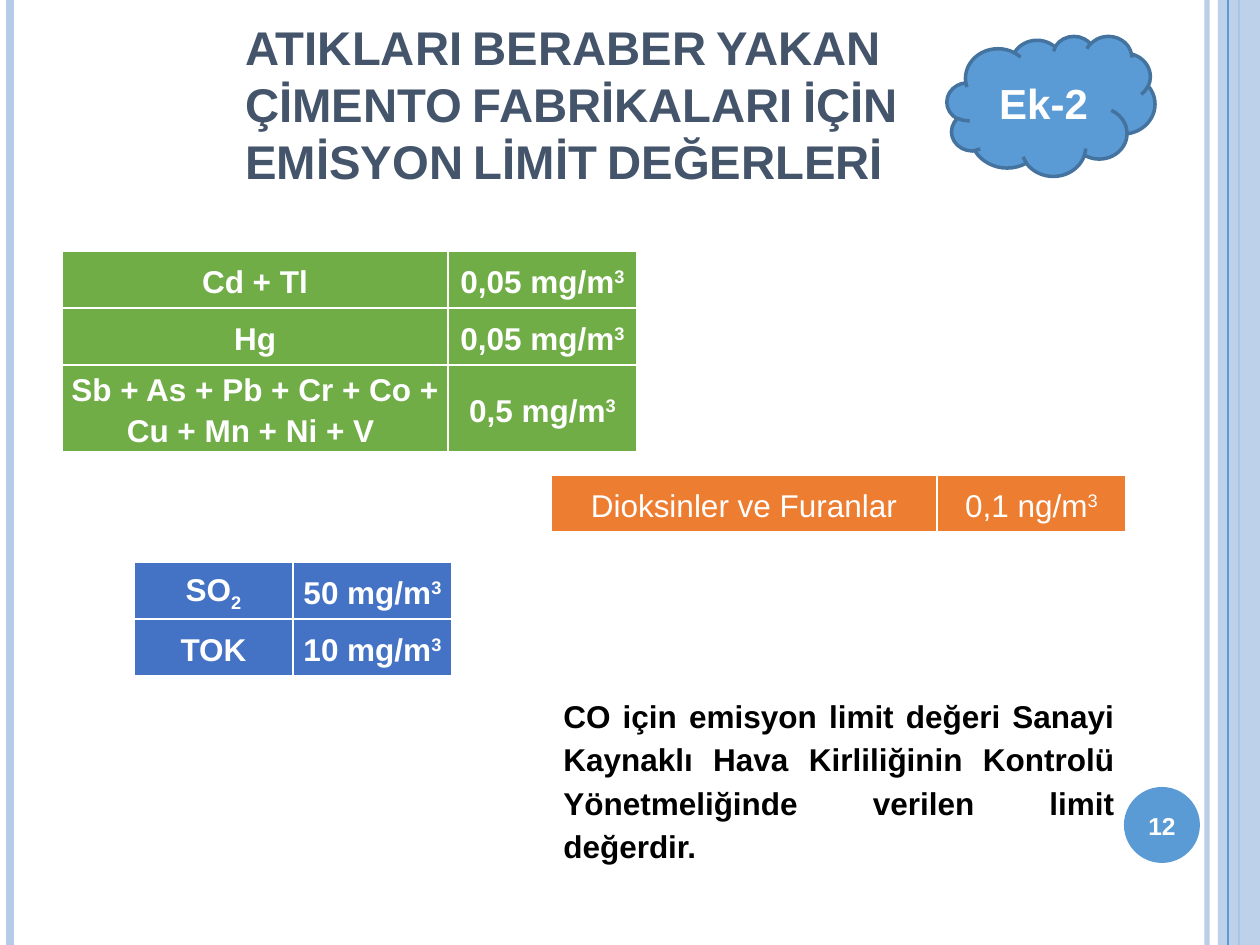
from dataclasses import dataclass

from lxml.etree import SubElement
from pptx import Presentation
from pptx.dml.color import RGBColor
from pptx.enum.shapes import MSO_CONNECTOR, MSO_SHAPE
from pptx.enum.text import MSO_ANCHOR, PP_ALIGN
from pptx.oxml.ns import qn
from pptx.util import Emu, Pt


@dataclass(frozen=True)
class Theme:
    font: str = "Arial"
    white: str = "FFFFFF"
    black: str = "000000"
    title: str = "44546A"
    blue: str = "5B9BD5"
    outline: str = "43739E"
    pale: str = "B5CBE7"
    green: str = "70AD47"
    indigo: str = "4472C4"
    orange: str = "ED7D31"
    title_size: int = 27
    badge_size: int = 24
    body_size: int = 18
    number_size: int = 14


T = Theme()
SCALE = 914400 / 126  # EMU per px
WIDTH, HEIGHT = 1260, 945
SUPER, SUB = 30, -25


def px(n):
    return Emu(round(n * SCALE))


def rgb(color):
    return RGBColor.from_string(color)


def set_alpha(fill_parent, percent):
    color = fill_parent.find(f".//{qn('a:srgbClr')}")
    SubElement(color, qn("a:alpha"), val=str(percent * 1000))


def add_run(p, text, size, color, bold=True, baseline=0):
    r = p.add_run()
    r.text = text
    r.font.name, r.font.size, r.font.bold = T.font, Pt(size), bold
    r.font.color.rgb = rgb(color)
    if baseline:
        r.font._element.set("baseline", str(baseline * 1000))
    return r


def add_rule(slide, x, color, width, alpha=None):
    """Full-height vertical line."""
    line = slide.shapes.add_connector(
        MSO_CONNECTOR.STRAIGHT, px(x), 0, px(x), px(HEIGHT))
    line.line.color.rgb = rgb(color)
    line.line.width = Pt(width)
    sp_pr = line._element.spPr
    if alpha:
        set_alpha(sp_pr, alpha)
    SubElement(sp_pr, qn("a:effectLst"))


def add_shape(slide, kind, x, y, w, h, fill, outline=None, alpha=None):
    sp = slide.shapes.add_shape(kind, px(x), px(y), px(w), px(h))
    sp.shadow.inherit = False
    sp.fill.solid()
    sp.fill.fore_color.rgb = rgb(fill)
    if alpha:
        set_alpha(sp._element.spPr, alpha)
    if outline:
        sp.line.color.rgb = rgb(outline)
        sp.line.width = Pt(2)
    else:
        sp.line.fill.background()
    return sp


def first_paragraph(sp, anchor, align):
    tf = sp.text_frame
    tf.word_wrap = True
    tf.vertical_anchor = anchor
    p = tf.paragraphs[0]
    p.alignment = align
    return p


def add_text_box(slide, x, y, w, h, anchor, align):
    sp = slide.shapes.add_textbox(px(x), px(y), px(w), px(h))
    return first_paragraph(sp, anchor, align)


def style_cell(cell, fill):
    tc_pr = cell._tc.get_or_add_tcPr()
    for side in ("a:lnL", "a:lnR", "a:lnT", "a:lnB"):
        ln = SubElement(tc_pr, qn(side), w=str(Pt(1)))
        SubElement(SubElement(ln, qn("a:solidFill")), qn("a:srgbClr"), val=T.white)
    cell.fill.solid()
    cell.fill.fore_color.rgb = rgb(fill)
    cell.vertical_anchor = MSO_ANCHOR.MIDDLE
    cell.margin_left = cell.margin_right = px(9)
    cell.margin_top = cell.margin_bottom = 0


def add_limit_table(slide, x, y, col_widths, row_heights, rows, fill, bold=True):
    """Table of substances and limits; a cell is a list of (text, baseline)."""
    frame = slide.shapes.add_table(len(rows), len(col_widths), px(x), px(y),
                                   px(sum(col_widths)), px(sum(row_heights)))
    table = frame.table
    table.first_row = table.horz_banding = False
    for column, w in zip(table.columns, col_widths):
        column.width = px(w)
    for i, (h, row) in enumerate(zip(row_heights, rows)):
        table.rows[i].height = px(h)
        for j, parts in enumerate(row):
            cell = table.cell(i, j)
            style_cell(cell, fill)
            p = cell.text_frame.paragraphs[0]
            p.alignment = PP_ALIGN.CENTER
            p.line_spacing = 1.15
            if j == 1:
                p.space_after = Pt(10)
            for text, baseline in parts:
                add_run(p, text, T.body_size, T.white, bold, baseline)


def plain(text):
    return [(text, 0)]


def limit(value, unit="mg/m"):
    return [(f"{value} {unit}", 0), ("3", SUPER)]


def add_frame(slide):
    add_rule(slide, 1207, T.pale, 3, alpha=93)
    add_rule(slide, 10, T.pale, 4.5)
    add_rule(slide, 1239, T.blue, 1.5)
    add_shape(slide, MSO_SHAPE.RECTANGLE, 1218, 0, WIDTH - 1218, HEIGHT,
              T.pale, alpha=87)
    add_rule(slide, 1228, T.blue, 0.75)
    add_shape(slide, MSO_SHAPE.OVAL, 1124, 787, 76, 76, T.blue)


def add_title(slide):
    p = add_text_box(slide, 233, 76, 859, 119, MSO_ANCHOR.BOTTOM, PP_ALIGN.LEFT)
    lines = ("ATIKLARI BERABER YAKAN ÇİMENTO FABRİKALARI İÇİN",
             "EMİSYON LİMİT DEĞERLERİ")
    for i, text in enumerate(lines):
        if i:
            p.add_line_break()
        r = add_run(p, text, T.title_size, T.title)
        r.font._element.set("cap", "small")


def main():
    prs = Presentation()
    prs.slide_width, prs.slide_height = px(WIDTH), px(HEIGHT)
    slide = prs.slides.add_slide(prs.slide_layouts[6])

    # Side stripes, title and slide number
    add_frame(slide)
    add_title(slide)
    p = add_text_box(slide, 1120, 790, 84, 72, MSO_ANCHOR.MIDDLE, PP_ALIGN.CENTER)
    add_run(p, "12", T.number_size, T.white)

    # Heavy metals
    add_limit_table(slide, 62, 251, (386, 189), (57, 57, 81), [
        (plain("Cd + Tl"), limit("0,05")),
        (plain("Hg"), limit("0,05")),
        (plain("Sb + As + Pb + Cr + Co + Cu + Mn + Ni + V "), limit("0,5")),
    ], T.green)

    # Sulphur dioxide and organic carbon
    add_limit_table(slide, 134, 562, (159, 159), (57, 57), [
        ([("SO", 0), ("2", SUB)], limit("50")),
        (plain("TOK"), limit("10")),
    ], T.indigo)

    # Annex badge
    cloud = add_shape(slide, MSO_SHAPE.CLOUD, 947, 36, 208, 140, T.blue, T.outline)
    p = first_paragraph(cloud, MSO_ANCHOR.MIDDLE, PP_ALIGN.CENTER)
    add_run(p, "Ek-2", T.badge_size, T.white)

    # Dioxins and furans
    add_limit_table(slide, 551, 475, (386, 189), (57,), [
        (plain("Dioksinler ve Furanlar"), limit("0,1", "ng/m")),
    ], T.orange, bold=False)

    # Carbon monoxide note
    p = add_text_box(slide, 551, 685, 576, 184, MSO_ANCHOR.TOP, PP_ALIGN.JUSTIFY)
    p.line_spacing = 1.15
    p.space_after = Pt(4)
    add_run(p, "CO için emisyon limit değeri Sanayi Kaynaklı Hava Kirliliğinin "
               "Kontrolü Yönetmeliğinde verilen limit değerdir.",
            T.body_size, T.black)

    prs.save("out.pptx")


if __name__ == "__main__":
    main()
